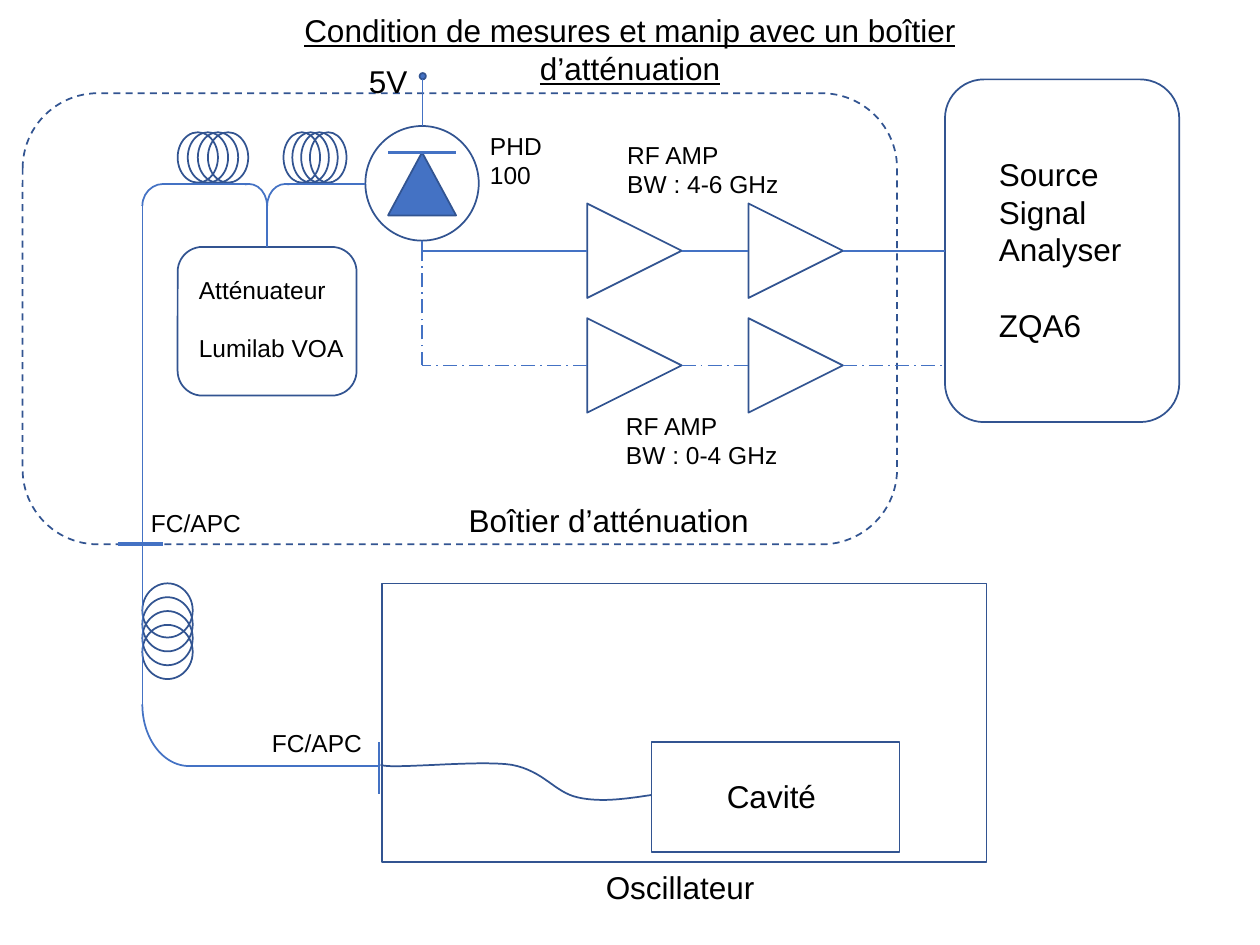
from dataclasses import dataclass
from typing import Optional

from lxml.etree import SubElement
from pptx import Presentation
from pptx.dml.color import RGBColor
from pptx.enum.dml import MSO_LINE
from pptx.enum.shapes import MSO_CONNECTOR, MSO_SHAPE as Preset
from pptx.enum.text import MSO_AUTO_SIZE, PP_ALIGN
from pptx.oxml.ns import qn
from pptx.util import Inches, Pt

OUTLINE = RGBColor(0x32, 0x54, 0x91)
ACCENT = RGBColor(0x44, 0x72, 0xC4)
BLACK = RGBColor(0, 0, 0)
DASH_DOT = MSO_LINE.LONG_DASH_DOT


@dataclass
class Box:
    left: float
    top: float
    width: float
    height: float

    def emu(self) -> list:
        return [Inches(v) for v in (self.left, self.top, self.width, self.height)]


@dataclass
class Label:
    box: Box
    lines: list
    size: int = 18
    gap_line: Optional[int] = None  # index of the line set one line lower


@dataclass
class Wire:
    x1: float
    y1: float
    x2: float
    y2: float
    width: float = 1
    dash: Optional[MSO_LINE] = None


@dataclass
class Coil:
    first: Box
    dx: float
    dy: float
    turns: int = 4


def style(shape, line=OUTLINE, fill=None):
    shape.shadow.inherit = False
    if fill is None:
        shape.fill.background()
    else:
        shape.fill.solid()
        shape.fill.fore_color.rgb = fill
    shape.line.color.rgb = line
    shape.line.width = Pt(1)
    return shape


def draw_shape(shapes, preset: Preset, box: Box, line=OUTLINE, fill=None):
    return style(shapes.add_shape(preset, *box.emu()), line, fill)


def draw_wire(shapes, wire: Wire):
    ends = [Inches(v) for v in (wire.x1, wire.y1, wire.x2, wire.y2)]
    connector = shapes.add_connector(MSO_CONNECTOR.STRAIGHT, *ends)
    connector.line.color.rgb = ACCENT
    connector.line.width = Pt(wire.width)
    if wire.dash:
        connector.line.dash_style = wire.dash
    SubElement(connector._element.spPr, qn("a:effectLst"))
    return connector


def draw_bend(shapes, box: Box, start: float = 162, flips: tuple = ()) -> None:
    """Draw an arc; start is in units of 100000/60000 degrees."""
    bend = draw_shape(shapes, Preset.ARC, box, ACCENT)
    bend.adjustments[0] = start
    for flip in flips:
        bend._element.spPr.xfrm.set(flip, "1")


def draw_coil(shapes, coil: Coil) -> None:
    loops = shapes.add_group_shape().shapes
    for turn in range(coil.turns):
        draw_shape(loops, Preset.OVAL, Box(coil.first.left + turn * coil.dx,
                                           coil.first.top + turn * coil.dy,
                                           coil.first.width, coil.first.height))


def draw_label(shapes, label: Label):
    frame = shapes.add_textbox(*label.box.emu()).text_frame
    frame.word_wrap = True
    frame.auto_size = MSO_AUTO_SIZE.SHAPE_TO_FIT_TEXT
    frame.text = "\n".join(label.lines)
    for index, paragraph in enumerate(frame.paragraphs):
        if index == label.gap_line:
            paragraph.space_before = Pt(label.size * 1.2)
        for run in paragraph.runs:
            run.font.name = "Arial"
            run.font.size = Pt(label.size)
            run.font.color.rgb = BLACK
    return frame


def bezier(p0, p1, p2, p3, steps: int = 16) -> list:
    """Points along a cubic curve, without its first point."""
    points = []
    for step in range(1, steps + 1):
        t = step / steps
        weights = ((1 - t) ** 3, 3 * t * (1 - t) ** 2, 3 * t * t * (1 - t), t ** 3)
        points.append(tuple(sum(w * p[axis] for w, p in zip(weights, (p0, p1, p2, p3)))
                            for axis in (0, 1)))
    return points


def draw_fibre(shapes) -> None:
    knots = [(5.17, 6.31), (4.97, 6.34), (4.77, 6.37), (4.59, 6.33), (4.4, 6.29),
             (4.32, 6.12), (4.06, 6.07), (3.79, 6.03), (3.09, 6.11), (3.02, 6.07)]
    curve = [knots[0]]
    for i in range(0, len(knots) - 1, 3):
        curve += bezier(*knots[i:i + 4])
    start, *others = [(Inches(x), Inches(y)) for x, y in curve]
    builder = shapes.build_freeform(*start)
    builder.add_line_segments(others, close=False)
    style(builder.convert_to_shape())


COILS = [
    Coil(Box(1.41, 1.05, 0.32, 0.4), 0.08, 0),
    Coil(Box(2.25, 1.05, 0.29, 0.4), 0.07, 0),
    Coil(Box(1.13, 4.63, 0.4, 0.43), 0, 0.11),
]
WIRES = [
    Wire(3.08, 1.21, 3.62, 1.21, 1.5),
    Wire(3.35, 1.91, 3.35, 1.99),
    Wire(2.9, 1.46, 2.28, 1.46),
    Wire(1.97, 1.46, 1.29, 1.46),
    Wire(1.13, 1.63, 1.13, 5.62),
    Wire(1.5, 6.08, 3.01, 6.08),
    Wire(3.35, 1, 3.35, 0.63, 0.5),
    Wire(0.94, 4.32, 1.29, 4.32, 2.25),
    Wire(3.01, 5.89, 3.01, 6.3),
    Wire(3.35, 2.9, 3.35, 1.91, dash=DASH_DOT),
]
LABELS = [
    Label(Box(7.83, 1.18, 1.19, 1.62), ["Source", "Signal", "Analyser", "ZQA6"], gap_line=3),
    Label(Box(1.48, 2.13, 1.38, 0.81), ["Atténuateur", "Lumilab VOA"], 14, gap_line=1),
    Label(Box(4.71, 6.84, 1.43, 0.4), ["Oscillateur"]),
    Label(Box(3.79, 0.99, 0.75, 0.57), ["PHD 100"], 14),
    Label(Box(4.88, 1.06, 1.47, 0.57), ["RF AMP", "BW : 4-6 GHz"], 14),
    Label(Box(4.87, 3.21, 1.47, 0.57), ["RF AMP", "BW : 0-4 GHz"], 14),
    Label(Box(2.83, 0.44, 0.56, 0.4), ["5V"]),
    Label(Box(1.1, 3.98, 1.13, 0.34), ["FC/APC"], 14),
    Label(Box(2.06, 5.73, 0.93, 0.34), ["FC/APC"], 14),
    Label(Box(5.67, 6.12, 0.94, 0.4), ["Cavité"]),
    Label(Box(3.62, 3.93, 2.72, 0.4), ["Boîtier d’atténuation"]),
]


def main() -> None:
    deck = Presentation()
    deck.slide_width, deck.slide_height = Inches(10), Inches(7.5)
    shapes = deck.slides.add_slide(deck.slide_layouts[6]).shapes

    title = draw_label(shapes, Label(Box(1.75, 0.04, 6.5, 0.71), [
        "Condition de mesures et manip avec un boîtier d’atténuation"])).paragraphs[0]
    title.alignment = PP_ALIGN.CENTER
    title.runs[0].font.underline = True

    enclosure = draw_shape(shapes, Preset.ROUNDED_RECTANGLE, Box(0.18, 0.74, 6.94, 3.58))
    enclosure.line.dash_style = MSO_LINE.DASH
    analyser = draw_shape(shapes, Preset.ROUNDED_RECTANGLE, Box(7.5, 0.63, 1.86, 2.72))
    attenuator = draw_shape(shapes, Preset.ROUNDED_RECTANGLE, Box(1.41, 1.96, 1.42, 1.18))
    draw_shape(shapes, Preset.RECTANGLE, Box(3.03, 4.63, 4.8, 2.21))  # oscillator
    draw_shape(shapes, Preset.RECTANGLE, Box(5.17, 5.89, 1.97, 0.87))  # cavity

    # Photodiode and its supply terminal
    draw_shape(shapes, Preset.OVAL, Box(2.9, 1, 0.9, 0.91))
    draw_shape(shapes, Preset.ISOSCELES_TRIANGLE, Box(3.08, 1.21, 0.54, 0.5), fill=ACCENT)
    draw_shape(shapes, Preset.OVAL, Box(3.33, 0.58, 0.05, 0.05), fill=ACCENT)

    for coil in COILS:
        draw_coil(shapes, coil)
    for wire in WIRES:
        draw_wire(shapes, wire)
    draw_wire(shapes, Wire(2.12, 1.61, 2.12, 1.96)).end_connect(attenuator, 0)

    # Two amplifier chains from the photodiode to the analyser
    for y, dash in ((1.99, None), (2.9, DASH_DOT)):
        for left in (4.66, 5.94):
            amplifier = draw_shape(shapes, Preset.ISOSCELES_TRIANGLE,
                                   Box(left, y - 0.375, 0.75, 0.75))
            amplifier.rotation = 90
        draw_wire(shapes, Wire(4.66, y, 3.35, y, dash=dash))
        draw_wire(shapes, Wire(5.41, y, 5.94, y, dash=dash))
        output = draw_wire(shapes, Wire(6.69, y, 7.5, y, dash=dash))
        if dash is None:
            output.end_connect(analyser, 1)

    draw_bend(shapes, Box(2.12, 1.46, 0.29, 0.35), 155.83, ("flipH",))
    draw_bend(shapes, Box(1.83, 1.46, 0.29, 0.35), 155.83)
    draw_bend(shapes, Box(1.13, 1.46, 0.33, 0.35), flips=("flipH",))
    draw_bend(shapes, Box(1.13, 5.1, 0.74, 0.98), flips=("flipH", "flipV"))
    draw_fibre(shapes)

    for label in LABELS:
        draw_label(shapes, label)
    deck.save("out.pptx")


if __name__ == "__main__":
    main()
